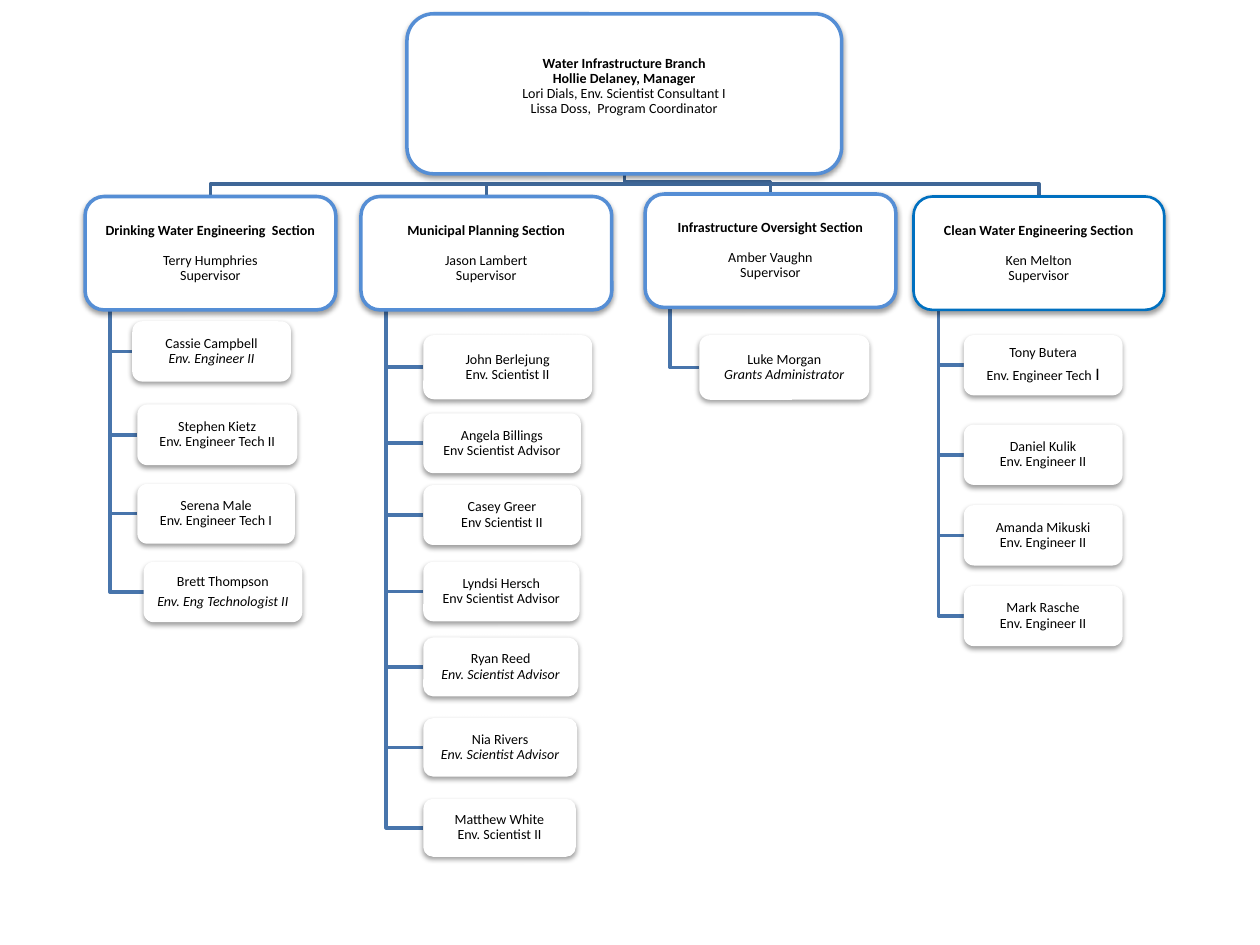
from dataclasses import dataclass

from lxml.etree import SubElement
from pptx import Presentation
from pptx.dml.color import RGBColor as Rgb
from pptx.enum.shapes import MSO_SHAPE as Kind
from pptx.enum.text import MSO_ANCHOR as Anchor, PP_ALIGN as Align
from pptx.oxml.ns import qn
from pptx.util import Inches, Pt

# The slide is a grid of 100 columns by 75 rows.
WIDE, HIGH = Inches(10), Inches(7.5)
COLS, ROWS = 100, 75
UNIT = WIDE / COLS


@dataclass(frozen=True)
class Theme:
    font: str = "Calibri"
    size: float = 8
    large: float = 10
    line: float = 2
    thin: float = 1.5
    gap: float = 8.6
    loose: float = 2.9
    ink: str = "000000"
    card: str = "FFFFFF"
    edge: str = "558ED5"
    deep: str = "0070C0"
    bus: str = "3F6797"
    branch: str = "4875AC"


LOOK = Theme()
BOLD, ITALIC, LARGE = {"bold": True}, {"italic": True}, {"size": Pt(LOOK.large)}
LOOSE = {"space_before": Pt(LOOK.loose)}
FRAME = {
    "word_wrap": True, "vertical_anchor": Anchor.MIDDLE,
    "margin_left": Inches(0.01), "margin_right": Inches(0.01),
    "margin_top": Inches(0.01), "margin_bottom": Inches(0.01),
}

ROOT = (32.3, 1.1, 34.5, 12.7)
ROOT_TEXT = [
    ("Water Infrastructure Branch", BOLD),
    ("Hollie Delaney, Manager", BOLD),
    ("Lori Dials, Env. Scientist Consultant I", {}),
    ("Lissa Doss,  Program Coordinator", {}),
]
HEAD_W, HEAD_H = 19.9, 9
RATIO = 0.38  # height to width of a staff card

# Section: left, top, title, supervisor, edge colour, edge width, staff.
# Staff: left, top, width, name, role, role font, role paragraph, tail.
SECTIONS = [
    (6.75, 15.6, "Drinking Water Engineering  Section", "Terry Humphries",
     LOOK.edge, LOOK.line, [
         (10.5, 25.5, 12.6, "Cassie Campbell", "Env. Engineer II", ITALIC),
         (10.9, 32.1, 12.7, "Stephen Kietz", "Env. Engineer Tech II"),
         (10.9, 38.4, 12.5, "Serena Male", "Env. Engineer Tech I"),
         (11.4, 44.6, 12.6, "Brett Thompson", "Env. Eng Technologist II",
          ITALIC, LOOSE),
     ]),
    (28.65, 15.6, "Municipal Planning Section", "Jason Lambert",
     LOOK.edge, LOOK.line, [
         (33.6, 26.6, 13.4, "John Berlejung", "Env. Scientist II"),
         (33.6, 32.8, 12.5, "Angela Billings", "Env Scientist Advisor"),
         (33.6, 38.5, 12.5, "Casey Greer", "Env Scientist II"),
         (33.6, 44.6, 12.4, "Lyndsi Hersch", "Env Scientist Advisor"),
         (33.6, 50.6, 12.3, "Ryan Reed", "Env. Scientist Advisor", ITALIC),
         (33.6, 57.0, 12.2, "Nia Rivers", "Env. Scientist Advisor", ITALIC),
         (33.6, 63.4, 12.1, "Matthew White", "Env. Scientist II"),
     ]),
    (51.2, 15.4, "Infrastructure Oversight Section", "Amber Vaughn",
     LOOK.edge, LOOK.line, [
         (55.5, 26.6, 13.5, "Luke Morgan", "Grants Administrator", ITALIC),
     ]),
    (72.5, 15.6, "Clean Water Engineering Section", "Ken Melton",
     LOOK.deep, LOOK.thin, [
         (76.5, 26.6, 12.6, "Tony Butera", "Env. Engineer Tech ",
          {}, LOOSE, ("I", LARGE)),
         (76.5, 33.7, 12.6, "Daniel Kulik", "Env. Engineer II"),
         (76.5, 40.1, 12.6, "Amanda Mikuski", "Env. Engineer II"),
         (76.5, 46.5, 12.6, "Mark Rasche", "Env. Engineer II"),
     ]),
]


def emu(*vals):
    return [round(v * UNIT) for v in vals]


def put(thing, vals):
    for name, val in vals.items():
        setattr(thing, name, val)


def path_line(shapes, color, *points):
    """Draw an open line with square bends through grid points."""
    first, *rest = [emu(*p) for p in points]
    pen = shapes.build_freeform(*first)
    pen.add_line_segments(rest, close=False)
    line = pen.convert_to_shape()
    line.shadow.inherit = False
    line.fill.background()
    line.line.color.rgb = Rgb.from_string(color)
    line.line.width = Pt(LOOK.line)


def shade(shape):
    """Add a soft shadow that falls straight down."""
    shape.shadow.inherit = False
    fx = shape._element.spPr.find(qn("a:effectLst"))
    cast = SubElement(fx, qn("a:outerShdw"), blurRad=str(Pt(3.1)),
                      dist=str(Pt(1.6)), dir="5400000", rotWithShape="0")
    tint = SubElement(cast, qn("a:srgbClr"), val=LOOK.ink)
    SubElement(tint, qn("a:alpha"), val="38000")


def add_run(para, text, style):
    run = para.add_run()
    run.text = text
    put(run.font, {"name": LOOK.font, "size": Pt(LOOK.size), **style})
    run.font.color.rgb = Rgb.from_string(LOOK.ink)


def add_card(shapes, box, lines, edge=None, width=0, frame=None):
    """Draw a card; a line is text, font, then paragraph format and a tail."""
    card = shapes.add_shape(Kind.ROUNDED_RECTANGLE, *emu(*box))
    card.fill.solid()
    card.fill.fore_color.rgb = Rgb.from_string(LOOK.card)
    if edge:
        card.line.color.rgb = Rgb.from_string(edge)
        card.line.width = Pt(width)
    else:
        card.line.fill.background()
    shade(card)
    body = card.text_frame
    put(body, {**FRAME, **(frame or {})})
    for i, (text, style, *more) in enumerate(lines):
        para = body.add_paragraph() if i else body.paragraphs[0]
        form = more[0] if more else {}
        put(para, {"alignment": Align.CENTER, "line_spacing": 0.9, **form})
        for run in [(text, style), *more[1:]]:
            add_run(para, *run)


def add_links(shapes, left, top, staff):
    x, y, w, h = ROOT
    mid, base, bus = x + w / 2, y + h, top - 1
    end = left + HEAD_W / 2
    path_line(shapes, LOOK.bus, (mid, base), (mid, bus), (end, bus), (end, top))
    stem = left + HEAD_W / 10
    for side, y, w, *_ in staff:
        row = y + w * RATIO / 2
        path_line(shapes, LOOK.branch,
                  (stem, top + HEAD_H), (stem, row), (side, row))


def add_section(shapes, left, top, title, chief, edge, width, staff):
    lines = [(title, BOLD), (chief, {}, {"space_before": Pt(LOOK.gap)}),
             ("Supervisor", {})]
    add_card(shapes, (left, top, HEAD_W, HEAD_H), lines, edge, width)
    for x, y, w, name, role, *form in staff:
        add_card(shapes, (x, y, w, w * RATIO),
                 [(name, {}), (role, *(form or [{}]))])


def main():
    deck = Presentation()
    put(deck, {"slide_width": WIDE, "slide_height": HIGH})
    shapes = deck.slides.add_slide(deck.slide_layouts[6]).shapes
    for left, top, *_, staff in SECTIONS:
        add_links(shapes, left, top, staff)
    add_card(shapes, ROOT, ROOT_TEXT, LOOK.edge, LOOK.line,
             {"margin_bottom": Inches(0.13)})
    for section in SECTIONS:
        add_section(shapes, *section)
    deck.save("out.pptx")


if __name__ == "__main__":
    main()
